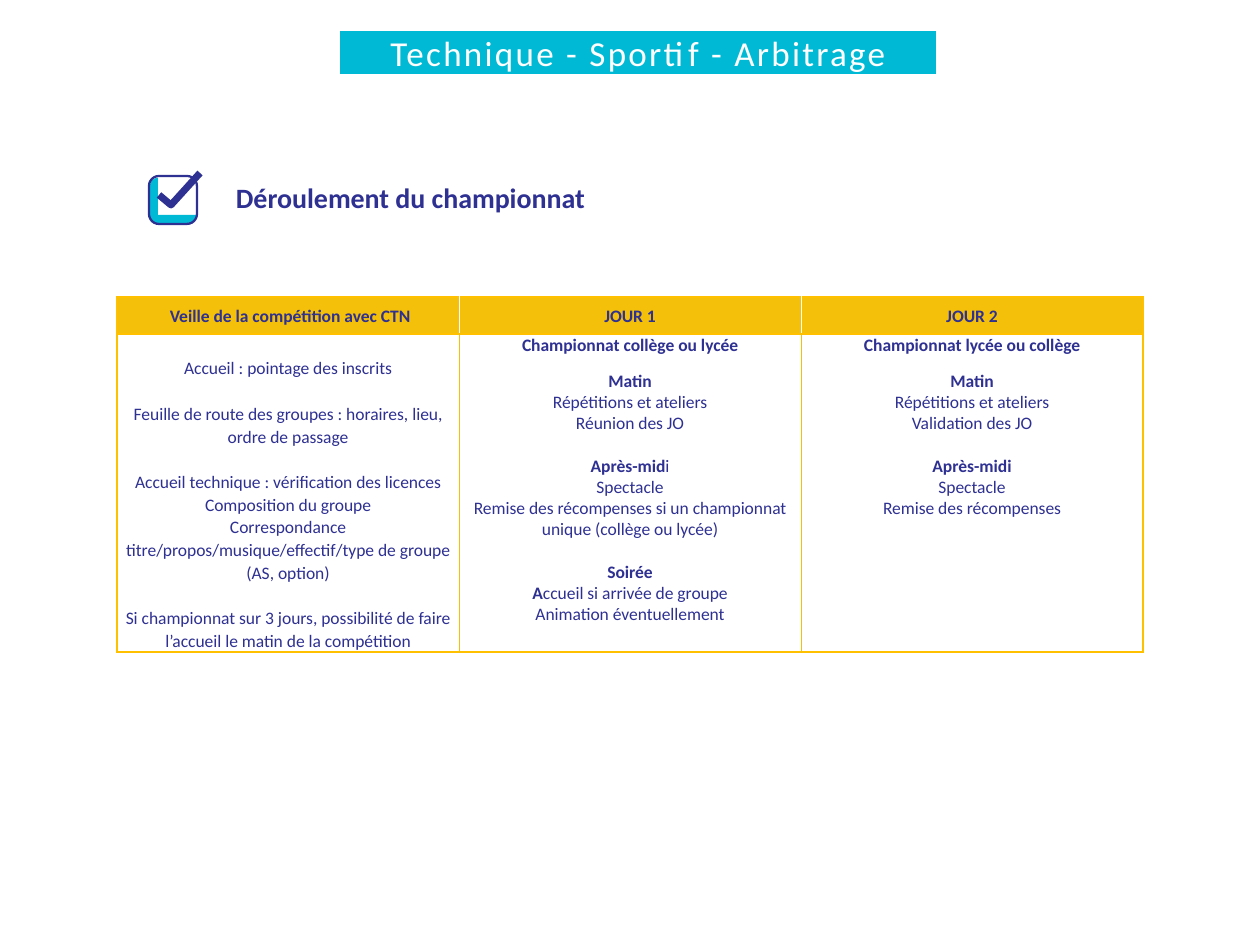
from dataclasses import dataclass
from pptx import Presentation
from pptx.dml.color import RGBColor as Rgb
from pptx.enum.shapes import MSO_SHAPE as Kind
from pptx.enum.text import MSO_ANCHOR as Anchor, MSO_AUTO_SIZE as Auto, PP_ALIGN as Align
from pptx.oxml.ns import qn
from pptx.util import Emu, Pt
from lxml.etree import SubElement as Sub

SCALE = 914400 / 126
FONT = "Calibri"
HEX = {"navy": "2E3092", "cyan": "00BAD5", "gold": "F4C009",
       "amber": "FFC000", "white": "FFFFFF"}
LOOSE = 1.07
LINE = 12.2


@dataclass
class Line:
    text: str
    bold: bool = False
    rest: str = ""
    gap: float = 0
    after: float = 0
    space: float = 1.0


@dataclass
class Edge:
    color: str
    width: float


RIM = Edge("amber", 1)
SPLIT = {0: Edge("white", 0.5), 1: Edge("gold", 0.5)}


def loose(text: str, gap: float = 0) -> Line:
    return Line(text, gap=gap, space=LOOSE)


def title(text: str) -> Line:
    return Line(text, True, after=8, space=LOOSE)


HEADS = ["\u00a0Veille de la compétition avec CTN".replace("\u00a0", " "), "JOUR 1", "JOUR 2"]
SKIP = LINE * LOOSE
EVE = [
    loose("Accueil : pointage des inscrits"),
    loose("Feuille de route des groupes : horaires, lieu, ordre de passage", SKIP),
    loose("Accueil technique : vérification des licences", SKIP),
    loose("Composition du groupe"),
    loose("Correspondance titre/propos/musique/effectif/type de groupe (AS, option)"),
    loose("Si championnat sur 3 jours, possibilité de faire l’accueil le matin de la compétition", SKIP),
]
DAY1 = [
    title("Championnat collège ou lycée"),
    Line("Matin", True),
    Line("Répétitions et ateliers"),
    Line("Réunion des JO"),
    Line("Après-mid", True, "i", LINE),
    Line("Spectacle"),
    Line("Remise des récompenses si un championnat unique (collège ou lycée)"),
    Line("Soirée", True, gap=LINE),
    Line("A", True, "ccueil si arrivée de groupe"),
    Line("Animation éventuellement"),
]
DAY2 = [
    title("Championnat lycée ou collège"),
    Line("Matin", True),
    Line("Répétitions et ateliers"),
    Line("Validation des JO"),
    Line("Après-midi", True, gap=LINE),
    Line("Spectacle"),
    Line("Remise des récompenses"),
]
ROWS = [[[Line(head, True, space=LOOSE)] for head in HEADS], [EVE, DAY1, DAY2]]


def px(n: int) -> Emu:
    return Emu(round(n * SCALE))


def rgb(name: str) -> Rgb:
    return Rgb.from_string(HEX[name])


def style(run, size: float, color: str, bold: bool = False) -> None:
    run.font.name, run.font.size, run.font.bold = FONT, Pt(size), bold
    run.font.color.rgb = rgb(color)


def write(frame, lines: list[Line]) -> None:
    for i, line in enumerate(lines):
        para = frame.add_paragraph() if i else frame.paragraphs[0]
        para.text = line.text
        para.alignment, para.line_spacing = Align.CENTER, line.space
        para.space_before, para.space_after = Pt(line.gap), Pt(line.after)
        style(para.runs[0], 10, "navy", line.bold)
        if line.rest:
            run = para.add_run()
            run.text = line.rest
            style(run, 10, "navy")


def border(cell, edges: dict[str, Edge]) -> None:
    props = cell._tc.get_or_add_tcPr()
    for side in "LRTB":
        edge = edges[side]
        ln = Sub(props, qn("a:ln" + side), w=str(Pt(edge.width)))
        fill = Sub(ln, qn("a:solidFill"))
        Sub(fill, qn("a:srgbClr"), val=HEX[edge.color])


def grid(slide) -> None:
    frame = slide.shapes.add_table(2, 3, px(117), px(297), px(1026), px(351))
    table = frame.table
    table.first_row = table.horz_banding = False
    for col in table.columns:
        col.width = px(342)
    for r, (row, high) in enumerate(zip(ROWS, (37, 314))):
        table.rows[r].height = px(high)
        for c, lines in enumerate(row):
            cell = table.cell(r, c)
            cell.margin_left = cell.margin_right = px(5)
            cell.margin_top = px(23 if lines is EVE else 0)
            cell.margin_bottom = 0
            write(cell.text_frame, lines)
            border(cell, {"L": SPLIT[r] if c else RIM,
                          "R": SPLIT[r] if c < 2 else RIM,
                          "T": RIM, "B": RIM})
            if r:
                cell.fill.background()
            else:
                cell.vertical_anchor = Anchor.MIDDLE
                cell.fill.solid()
                cell.fill.fore_color.rgb = rgb("gold")


def paint(shape, fill: str = "", line: float = 0) -> None:
    shape.shadow.inherit = False
    if fill:
        shape.fill.solid()
        shape.fill.fore_color.rgb = rgb(fill)
    else:
        shape.fill.background()
    if line:
        shape.line.color.rgb, shape.line.width = rgb("navy"), Pt(line)
    else:
        shape.line.fill.background()


def trace(shapes, points: list[tuple[int, int]], closed: bool):
    pen = shapes.build_freeform(*points[0], scale=SCALE)
    pen.add_line_segments(points[1:], close=closed)
    return pen.convert_to_shape()


def check(slide) -> None:
    shapes = slide.shapes.add_group_shape().shapes
    shade = [(158, 178), (156, 178), (154, 179), (151, 181), (150, 185),
             (150, 218), (151, 222), (154, 223), (156, 224), (192, 224),
             (195, 219), (197, 218), (197, 215), (158, 215)]
    paint(trace(shapes, shade, True), fill="cyan")
    box = shapes.add_shape(Kind.ROUNDED_RECTANGLE, px(149), px(176), px(48), px(48))
    box.adjustments[0] = 0.21
    paint(box, line=1.3)
    paint(trace(shapes, [(159, 195), (171, 205), (200, 173)], False), line=4)


def label(shape, text: str, size: int, color: str, bold: bool, left: int, top: int):
    frame = shape.text_frame
    frame.text = text
    frame.word_wrap, frame.auto_size = True, Auto.SHAPE_TO_FIT_TEXT
    frame.vertical_anchor = Anchor.TOP
    frame.margin_left, frame.margin_top = px(left), px(top)
    frame.margin_right = frame.margin_bottom = 0
    para = frame.paragraphs[0]
    style(para.runs[0], size, color, bold)
    return para


def main() -> None:
    deck = Presentation()
    deck.slide_width, deck.slide_height = px(1260), px(945)
    slide = deck.slides.add_slide(deck.slide_layouts[6])
    grid(slide)
    check(slide)
    head = slide.shapes.add_textbox(px(235), px(180), px(354), px(35))
    label(head, "Déroulement du championnat", 16, "navy", True, 1, 1)
    band = slide.shapes.add_shape(Kind.RECTANGLE, px(340), px(31), px(596), px(43))
    paint(band, fill="cyan")
    para = label(band, "Technique - Sportif - Arbitrage", 20, "white", False, 0, 0)
    para.alignment = Align.CENTER
    para.runs[0].font._element.set("spc", "130")
    deck.save("out.pptx")


if __name__ == "__main__":
    main()
